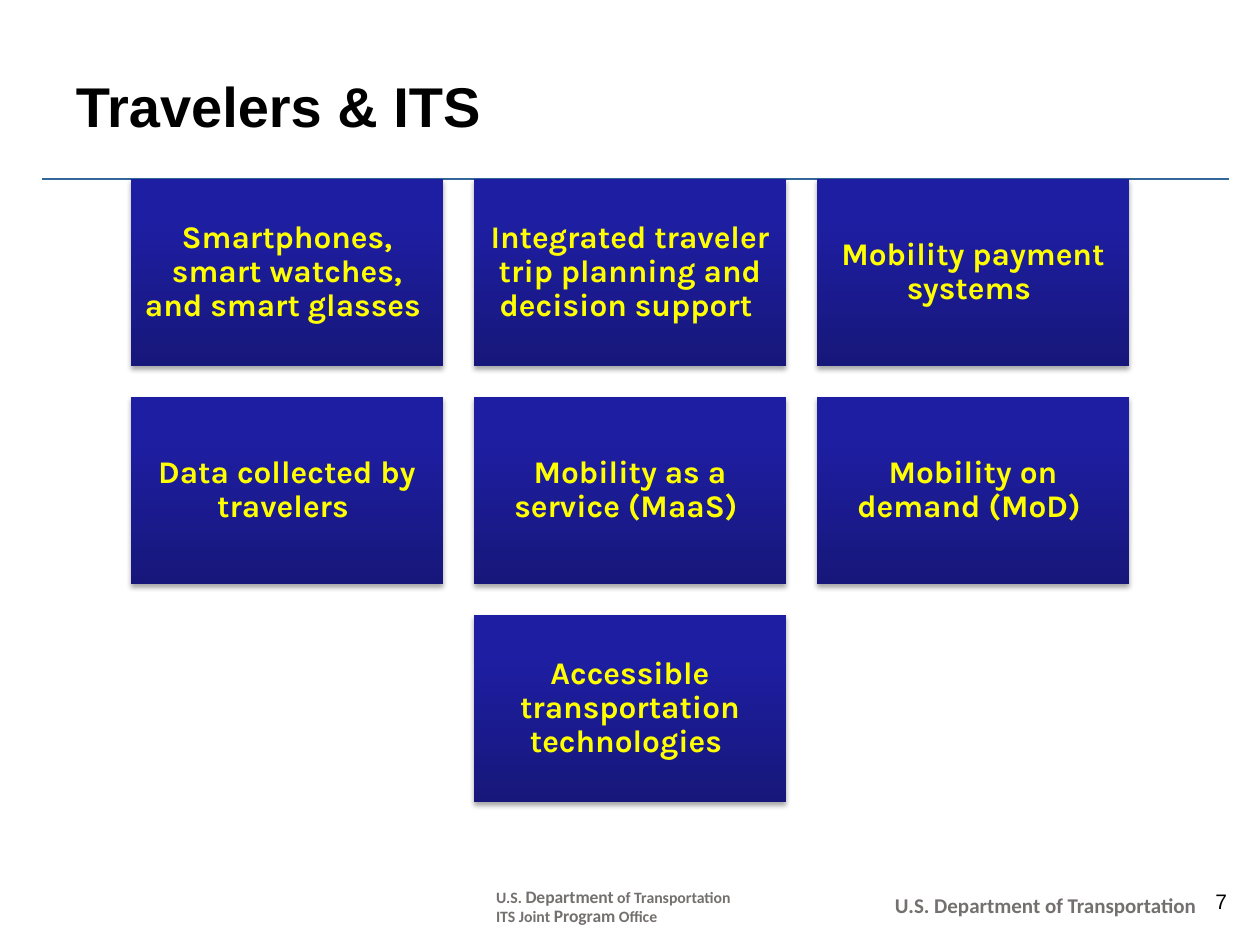
from copy import deepcopy
from dataclasses import dataclass

from lxml import etree
from pptx import Presentation
from pptx import util as u
from pptx.dml.color import RGBColor
from pptx.enum import shapes, text
from pptx.oxml.ns import qn

EMU_PER_PX = 914400 / 126
BLANK_LAYOUT = 6
BLACK, GREY, YELLOW, RULE_BLUE = "000000", "757070", "FFFF00", "336699"
CARD_GRADIENT = [(0, "17177B"), (0.8, "1E1EA3"), (1, "1C1CA5")]


@dataclass(frozen=True)
class Span:
    words: str
    size: int


@dataclass(frozen=True)
class Style:
    font: str
    color: str
    bold: bool = True
    align: text.PP_ALIGN = text.PP_ALIGN.LEFT
    spacing: float = 1.0
    anchor: text.MSO_ANCHOR = text.MSO_ANCHOR.TOP
    inset_x: int = 13
    inset_y: int = 6


@dataclass(frozen=True)
class Label:
    area: tuple[int, int, int, int]
    lines: list[list[Span]]
    style: Style


@dataclass(frozen=True)
class Card:
    column: int
    row: int
    words: str


CARD_STYLE = Style("Karla", YELLOW, align=text.PP_ALIGN.CENTER, spacing=0.9,
                   anchor=text.MSO_ANCHOR.MIDDLE, inset_x=9, inset_y=9)
CARD_LEFT, CARD_TOP, CARD_WIDTH, CARD_HEIGHT, CARD_GAP = 131, 179, 312, 187, 31

CARDS = [
    Card(0, 0, "Smartphones, smart watches, and smart glasses "),
    Card(1, 0, "Integrated traveler trip planning and decision support "),
    Card(2, 0, "Mobility payment systems "),
    Card(0, 1, "Data collected by travelers "),
    Card(1, 1, "Mobility as a service (MaaS) "),
    Card(2, 1, "Mobility on demand (MoD) "),
    Card(1, 2, "Accessible transportation technologies "),
]

LABELS = [
    Label((1187, 883, 53, 38), [[Span("7", 12)]],
          Style("Arial", BLACK, bold=False, align=text.PP_ALIGN.RIGHT)),
    Label((882, 892, 346, 30), [[Span("U.S. Department of Transportation", 12)]],
          Style("Calibri", GREY, spacing=0.75)),
    Label((483, 882, 261, 45),
          [[Span("U.S. ", 9), Span("Department", 10), Span(" of Transportation", 9)],
           [Span("ITS Joint ", 9), Span("Program", 10), Span(" Office", 9)]],
          Style("Calibri", GREY, spacing=0.9)),
    Label((63, 53, 1134, 105), [[Span("Travelers & ITS", 32)]],
          Style("Arial", BLACK, anchor=text.MSO_ANCHOR.MIDDLE)),
]


def px(length: int) -> u.Emu:
    return u.Emu(round(length * EMU_PER_PX))


def rgb(color: str) -> RGBColor:
    return RGBColor.from_string(color)


def write(box, lines: list[list[Span]], style: Style) -> None:
    frame = box.text_frame
    frame.word_wrap = True
    frame.vertical_anchor = style.anchor
    frame.margin_left = frame.margin_right = px(style.inset_x)
    frame.margin_top = frame.margin_bottom = px(style.inset_y)
    for index, line in enumerate(lines):
        para = frame.add_paragraph() if index else frame.paragraphs[0]
        para.alignment = style.align
        para.line_spacing = style.spacing
        for span in line:
            run = para.add_run()
            run.text = span.words
            run.font.size = u.Pt(span.size)
            run.font.name = style.font
            run.font.bold = style.bold
            run.font.color.rgb = rgb(style.color)


def add_label(page, label: Label) -> None:
    box = page.shapes.add_textbox(*map(px, label.area))
    write(box, label.lines, label.style)


def add_rule(page, left: int, right: int, top: int) -> None:
    rule = page.shapes.add_connector(shapes.MSO_CONNECTOR.STRAIGHT,
                                     px(left), px(top), px(right), px(top))
    rule.line.color.rgb = rgb(RULE_BLUE)
    rule.line.width = u.Pt(1.5)
    etree.SubElement(rule._element.spPr, qn("a:effectLst"))


def fill_gradient(box) -> None:
    """Shade the box from its bottom edge upwards."""
    box.fill.gradient()
    stop_list = box._element.spPr.find(".//" + qn("a:gsLst"))
    stop_list.append(deepcopy(stop_list[0]))
    for stop, (position, color) in zip(box.fill.gradient_stops, CARD_GRADIENT):
        stop.position = position
        stop.color.rgb = rgb(color)
    box.fill.gradient_angle = 90


def add_drop_shadow(box) -> None:
    box.shadow.inherit = False
    effects = box._element.spPr.find(qn("a:effectLst"))
    shadow = etree.SubElement(effects, qn("a:outerShdw"), blurRad=str(u.Pt(3.1)),
                              dist=str(u.Pt(1.8)), dir="5400000", rotWithShape="0")
    color = etree.SubElement(shadow, qn("a:srgbClr"), val=BLACK)
    etree.SubElement(color, qn("a:alpha"), val="35000")


def add_card(page, card: Card) -> None:
    left = CARD_LEFT + card.column * (CARD_WIDTH + CARD_GAP)
    top = CARD_TOP + card.row * (CARD_HEIGHT + CARD_GAP)
    box = page.shapes.add_shape(shapes.MSO_SHAPE.RECTANGLE, px(left), px(top),
                                px(CARD_WIDTH), px(CARD_HEIGHT))
    fill_gradient(box)
    box.line.fill.background()
    add_drop_shadow(box)
    write(box, [[Span(card.words, 18)]], CARD_STYLE)


def main() -> None:
    deck = Presentation()
    deck.slide_width, deck.slide_height = px(1260), px(945)
    page = deck.slides.add_slide(deck.slide_layouts[BLANK_LAYOUT])
    add_rule(page, 42, 1229, 179)
    for label in LABELS:
        add_label(page, label)
    for card in CARDS:
        add_card(page, card)
    deck.save("out.pptx")


if __name__ == "__main__":
    main()
